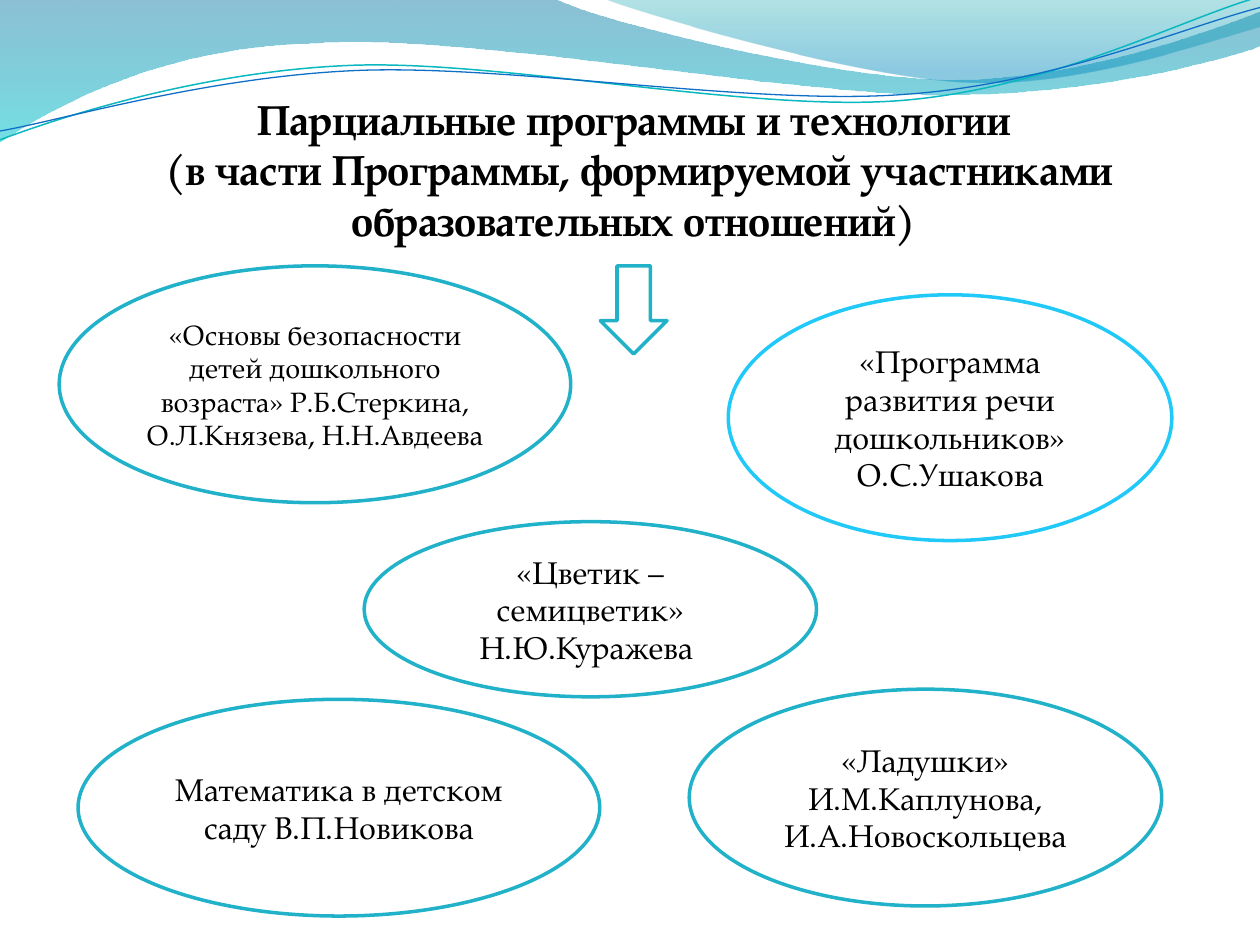
from dataclasses import dataclass

from lxml import etree
from pptx import Presentation
from pptx.dml.color import RGBColor
from pptx.enum.shapes import MSO_SHAPE
from pptx.enum.text import MSO_ANCHOR, PP_ALIGN
from pptx.oxml.ns import qn
from pptx.util import Inches, Pt

OVAL, DOWN_ARROW = MSO_SHAPE.OVAL, MSO_SHAPE.DOWN_ARROW
CENTER, TOP, MIDDLE = PP_ALIGN.CENTER, MSO_ANCHOR.TOP, MSO_ANCHOR.MIDDLE

FONT = "TeX Gyre Pagella"
BLACK = RGBColor(0x00, 0x00, 0x00)
WHITE = RGBColor(0xFF, 0xFF, 0xFF)
TEAL = RGBColor(0x21, 0xB2, 0xC9)
SKY = RGBColor(0x20, 0xC9, 0xF8)
WAVE_BLUE = RGBColor(0x00, 0x74, 0xA1)
WAVE_CYAN = RGBColor(0x00, 0xC6, 0xCF)
CREST_TEAL = RGBColor(0x00, 0xA1, 0xA9)
CREST_BLUE = RGBColor(0x00, 0x8B, 0xBF)
THREAD_TEAL = RGBColor(0x0A, 0xB8, 0xBF)
THREAD_BLUE = RGBColor(0x0F, 0x6F, 0xC6)

COLUMNS, ROWS = 100, 75
CELL = Inches(10) // COLUMNS


@dataclass
class Box:
    left: float
    top: float
    width: float
    height: float

    def inner(self, left, top, width, height):
        return Box(self.left + left, self.top + top, width, height)

    def emu(self):
        return [round(n * CELL) for n in (self.left, self.top, self.width, self.height)]


WAVE = [
    [(0, 0)], [(44, -0.1)],
    [(47.6, 1.7), (66.4, 6.3), (75.8, 6.3)],
    [(85.3, 6.3), (95.8, 2.6), (100, 0.9)],
    [(100.1, 3.6)],
    [(98.3, 4.4), (87, 7.6), (74.6, 7.5)],
    [(62.2, 7.5), (38.2, 2.8), (25.7, 3.4)],
    [(12.9, 3.6), (4.6, 8.3), (-0.1, 11.3)],
]
CREST = [
    [(47.9, -0.1)],
    [(50.9, 1.1), (68.2, 6.2), (76.9, 6.5)],
    [(85.6, 6.9), (96.1, 3.2), (100, 2.1)],
    [(100, 0)],
]
UPPER_THREAD = [
    [(0, 11.1)],
    [(4.8, 9.3), (15.8, 5.7), (27.7, 5.2)],
    [(39.5, 4.7), (59.3, 8.9), (71.3, 8)],
    [(83.3, 7.1), (93.8, 1.5), (99.8, -0.2)],
]
LOWER_THREAD = [
    [(0, 10.4)],
    [(4.7, 9.6), (16.4, 6.1), (28.3, 5.6)],
    [(40.3, 5.1), (59.7, 8.4), (71.7, 7.5)],
    [(83.6, 6.7), (94.1, 2.1), (100, 0.6)],
]
TITLE = [
    "Парциальные программы и технологии ",
    "(в части Программы, формируемой участниками образовательных отношений) ",
]
PROGRAMS = [
    ((4.7, 0.1, 40.6, 18.8), TEAL, 16,
     ["«Основы безопасности детей дошкольного возраста» Р.Б.Стеркина, О.Л.Князева, Н.Н.Авдеева"]),
    ((28.9, 20.4, 35.9, 13.9), TEAL, 18, ["«Цветик –семицветик» Н.Ю.Куражева "]),
    ((57.8, 2.4, 35.2, 19.5), SKY, 18,
     ["«Программа развития речи дошкольников»", "О.С.Ушакова"]),
    ((54.7, 33.7, 37.5, 17.2), TEAL, 18,
     ["«Ладушки»", "И.М.Каплунова,", "И.А.Новоскольцева"]),
    ((6.2, 34.5, 41.4, 17.2), TEAL, 18, ["Математика в детском саду В.П.Новикова"]),
]


def add_curve(slide, box, outline, close):
    points = [(round((box.left + x) * CELL), round((box.top + y) * CELL))
              for segment in outline for x, y in segment]
    builder = slide.shapes.build_freeform(*points[0], scale=1)
    builder.add_line_segments(points[1:], close=close)
    curve = builder.convert_to_shape()
    curve.shadow.inherit = False
    lines = iter(list(curve._element.spPr.iter(qn("a:lnTo"))))
    for segment in outline[1:]:
        steps = [next(lines) for _ in segment]
        if len(steps) == 3:
            bezier = etree.Element(qn("a:cubicBezTo"))
            steps[0].addprevious(bezier)
            for step in steps:
                bezier.append(step[0])
                step.getparent().remove(step)
    return curve


def add_band(slide, box, outline, stops):
    band = add_curve(slide, box, outline, True)
    band.line.fill.background()
    band.fill.gradient()
    band.fill.gradient_angle = 270
    for stop, (position, color, opacity) in zip(band.fill.gradient_stops, stops):
        stop.position = position
        stop.color.rgb = color
    colors = list(band._element.spPr.iter(qn("a:srgbClr")))
    for color, (position, rgb, opacity) in zip(colors, stops):
        etree.SubElement(color, qn("a:alpha"), val=str(opacity * 1000))


def add_thread(slide, box, outline, color, width):
    thread = add_curve(slide, box, outline, False)
    thread.fill.background()
    thread.line.color.rgb = color
    thread.line.width = Pt(width)


def write(frame, lines, size, anchor, bold=False):
    frame.word_wrap = True
    frame.vertical_anchor = anchor
    frame.text = "\n".join(lines)
    for paragraph in frame.paragraphs:
        paragraph.alignment = CENTER
        font = paragraph.runs[0].font
        font.name, font.size, font.bold = FONT, Pt(size), bold
        font.color.rgb = BLACK


def add_outlined(slide, box, preset, color):
    shape = slide.shapes.add_shape(preset, *box.emu())
    shape.shadow.inherit = False
    shape.fill.solid()
    shape.fill.fore_color.rgb = WHITE
    shape.line.color.rgb = color
    shape.line.width = Pt(2)
    return shape


def add_waves(slide, box):
    add_band(slide, box, WAVE, [(0, WAVE_BLUE, 45), (1, WAVE_CYAN, 55)])
    add_band(slide, box, CREST, [(0, CREST_TEAL, 30), (0.8, CREST_BLUE, 45)])
    add_thread(slide, box, UPPER_THREAD, THREAD_TEAL, 0.85)
    add_thread(slide, box, LOWER_THREAD, THREAD_BLUE, 0.75)


def add_title(slide, box):
    title = slide.shapes.add_textbox(*box.emu()).text_frame
    write(title, TITLE, 24, TOP, bold=True)
    title.margin_top = round(3.5 * CELL)


def add_programs(slide, box):
    add_outlined(slide, box.inner(47.65, 0.1, 5.3, 7), DOWN_ARROW, TEAL)
    for place, color, size, lines in PROGRAMS:
        program = add_outlined(slide, box.inner(*place), OVAL, color).text_frame
        write(program, lines, size, MIDDLE)
        program.margin_left = program.margin_right = round(0.8 * CELL)


def main():
    deck = Presentation()
    deck.slide_width, deck.slide_height = COLUMNS * CELL, ROWS * CELL
    slide = deck.slides.add_slide(deck.slide_layouts[6])
    add_waves(slide, Box(0, 0, COLUMNS, 12))
    add_title(slide, Box(6.2, 3.9, 89.1, 20.2))
    add_programs(slide, Box(0, 21, COLUMNS, 54))
    deck.save("out.pptx")


if __name__ == "__main__":
    main()
